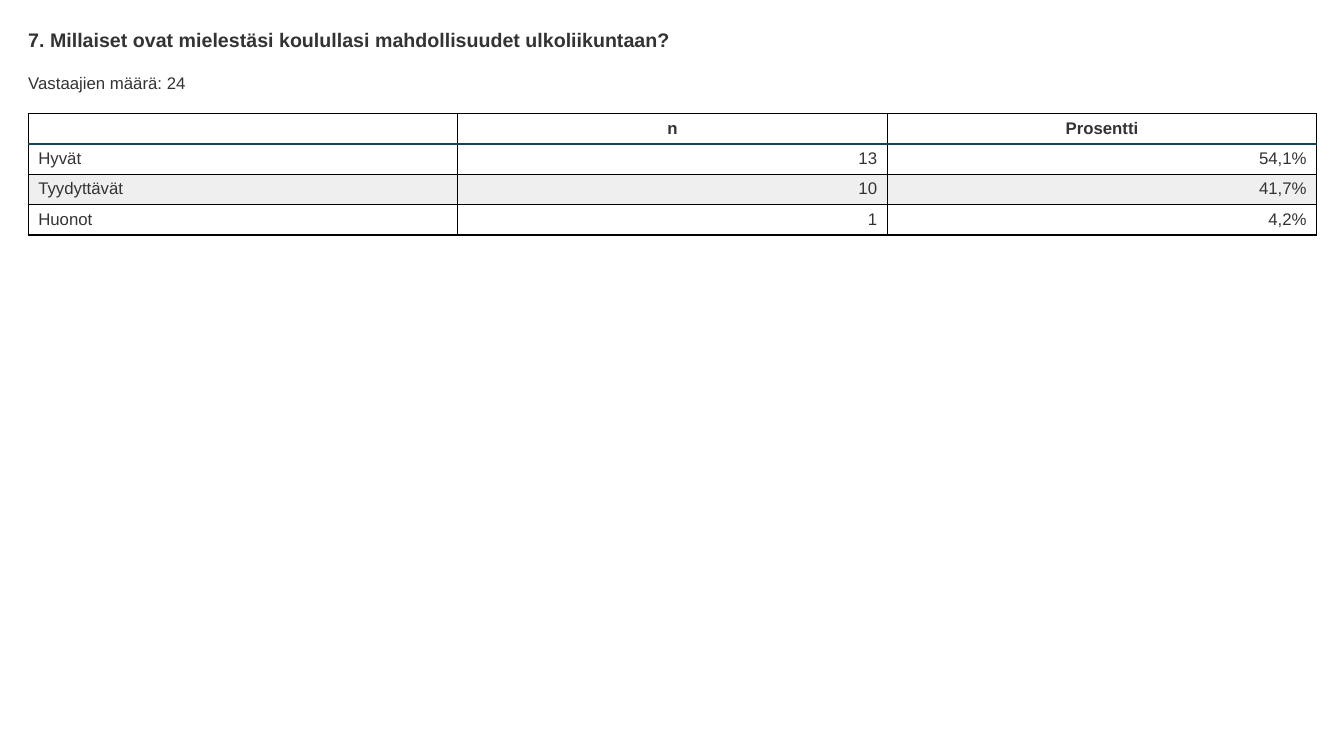
from lxml.etree import SubElement
from pptx import Presentation
from pptx.dml.color import RGBColor
from pptx.enum.text import MSO_AUTO_SIZE, PP_ALIGN
from pptx.oxml.ns import qn
from pptx.util import Inches, Pt

FONT = "Arial"
INK = "333333"
BLACK = "000000"
HEADER_RULE = "124456"
BAND = "EFEFEF"
BODY_SIZE = 12

SLIDE_WIDTH, SLIDE_HEIGHT = 13.33, 7.5
MARGIN = 0.28
CONTENT_WIDTH = 12.78
ROW_HEIGHT = 0.3

HEADER = ("", "n", "Prosentti")
ANSWERS = (
    ("Hyvät", "13", "54,1%"),
    ("Tyydyttävät", "10", "41,7%"),
    ("Huonot", "1", "4,2%"),
)


def color(hex_string):
    return RGBColor.from_string(hex_string)


def write(para, text, size, bold=False, align=PP_ALIGN.LEFT):
    para.text = text
    para.alignment = align
    for span in para.runs:
        span.font.name = FONT
        span.font.size = Pt(size)
        span.font.bold = bold
        span.font.color.rgb = color(INK)


def add_line_of_text(slide, text, left, top, width, height, size, bold=False):
    box = slide.shapes.add_textbox(
        Inches(left), Inches(top), Inches(width), Inches(height))
    frame = box.text_frame
    frame.margin_left = frame.margin_right = 0
    frame.margin_top = frame.margin_bottom = 0
    frame.word_wrap = True
    frame.auto_size = MSO_AUTO_SIZE.SHAPE_TO_FIT_TEXT
    write(frame.paragraphs[0], text, size, bold)


def add_border(cell, side, hex_string, points):
    """Add one cell border; call in the order L, R, T, B and before the fill."""
    properties = cell._tc.get_or_add_tcPr()
    line = SubElement(properties, qn(f"a:ln{side}"), w=str(Pt(points)))
    fill = SubElement(line, qn("a:solidFill"))
    SubElement(fill, qn("a:srgbClr"), val=hex_string)


def style_cell(cell, row):
    """Draw the borders, with a strong rule under the header, and the banding."""
    rule = (HEADER_RULE, 2)
    grid = (BLACK, 1)
    add_border(cell, "L", *grid)
    add_border(cell, "R", *grid)
    add_border(cell, "T", *(rule if row == 1 else grid))
    add_border(cell, "B", *(rule if row == 0 else grid))
    if row and row % 2 == 0:
        cell.fill.solid()
        cell.fill.fore_color.rgb = color(BAND)
    else:
        cell.fill.background()


def add_answer_table(slide, left, top, width):
    rows = (HEADER, *ANSWERS)
    table = slide.shapes.add_table(
        len(rows), len(HEADER), Inches(left), Inches(top),
        Inches(width), Inches(ROW_HEIGHT * len(rows))).table
    table.first_row = table.horz_banding = False
    for row, texts in enumerate(rows):
        for column, text in enumerate(texts):
            cell = table.cell(row, column)
            if row == 0:
                align = PP_ALIGN.CENTER
            else:
                align = PP_ALIGN.RIGHT if column else PP_ALIGN.LEFT
            para = cell.text_frame.paragraphs[0]
            write(para, text, BODY_SIZE, row == 0, align)
            if not text:
                # An empty cell would otherwise grow to the default text size.
                para._p.get_or_add_endParaRPr().set("sz", str(BODY_SIZE * 100))
            style_cell(cell, row)


def add_question_slide(deck):
    slide = deck.slides.add_slide(deck.slide_layouts[6])
    add_line_of_text(
        slide, "7. Millaiset ovat mielestäsi koulullasi mahdollisuudet ulkoliikuntaan?",
        MARGIN, MARGIN, CONTENT_WIDTH, 0.23, 14, bold=True)
    add_line_of_text(
        slide, "Vastaajien määrä: 24", MARGIN, 0.72, CONTENT_WIDTH, 0.2, BODY_SIZE)
    add_answer_table(slide, MARGIN, 1.13, CONTENT_WIDTH)


def main():
    deck = Presentation()
    deck.slide_width = Inches(SLIDE_WIDTH)
    deck.slide_height = Inches(SLIDE_HEIGHT)
    add_question_slide(deck)
    deck.save("out.pptx")


if __name__ == "__main__":
    main()
